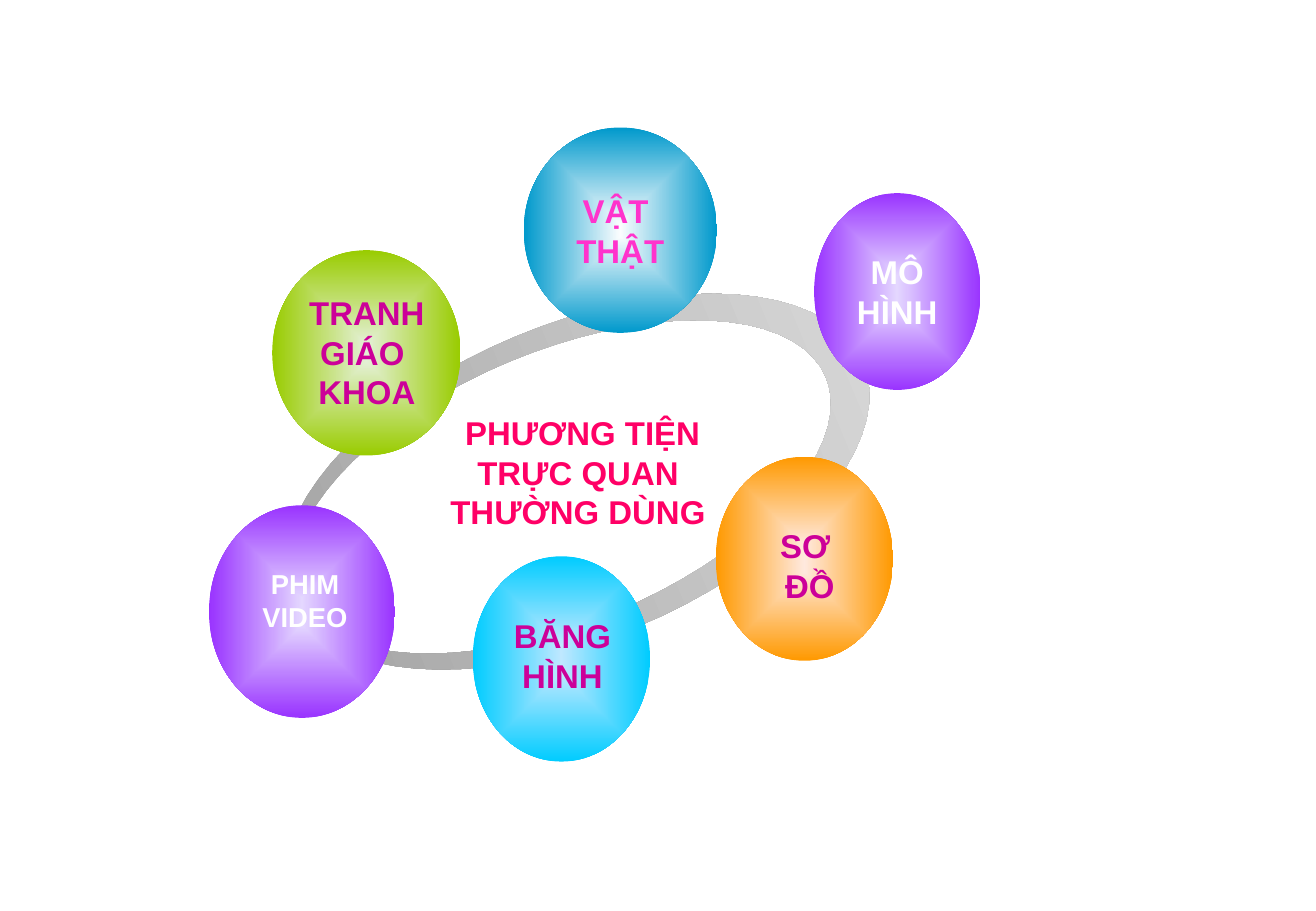
"""Builds a slide of six visual teaching aids placed around a tilted ring."""
from math import cos, sin, tau

from lxml import etree
from pptx import Presentation
from pptx.dml.color import RGBColor
from pptx.enum.shapes import MSO_SHAPE
from pptx.enum.text import MSO_ANCHOR, PP_ALIGN
from pptx.oxml.ns import qn
from pptx.util import Inches, Pt

OVAL = MSO_SHAPE.OVAL
MIDDLE = MSO_ANCHOR.MIDDLE
CENTER = PP_ALIGN.CENTER

WHITE = RGBColor(0xFF, 0xFF, 0xFF)
ROSE = RGBColor(0xFF, 0x00, 0x66)
PINK = RGBColor(0xFF, 0x33, 0xCC)
MAGENTA = RGBColor(0xCC, 0x00, 0x99)
DARK_GRAY = RGBColor(0x9D, 0x9D, 0x9D)
LIGHT_GRAY = RGBColor(0xDD, 0xDD, 0xDD)
PURPLE = (RGBColor(0xE4, 0xD7, 0xFF), RGBColor(0x99, 0x33, 0xFF))
ORANGE = (RGBColor(0xFF, 0xE9, 0xDE), RGBColor(0xFF, 0x99, 0x00))
LIME = (RGBColor(0xE4, 0xF0, 0xD6), RGBColor(0x99, 0xCC, 0x00))
BLUE = (RGBColor(0xFB, 0xFD, 0xFE), RGBColor(0x00, 0x99, 0xCC))
CYAN = (RGBColor(0xBF, 0xE8, 0xFF), RGBColor(0x00, 0xCC, 0xFF))


def paint_gradient(shape, start, end):
    shape.shadow.inherit = False
    shape.line.fill.background()
    shape.fill.gradient()
    shape.fill.gradient_angle = 0
    for stop, color in zip(shape.fill.gradient_stops, (start, end)):
        stop.color.rgb = color


def write_lines(frame, lines, size, color, wrap):
    frame.word_wrap = wrap
    for index, line in enumerate(lines):
        paragraph = frame.add_paragraph() if index else frame.paragraphs[0]
        paragraph.text = line
        paragraph.alignment = CENTER
        paragraph.font.name = "Arial"
        paragraph.font.size = Pt(size)
        paragraph.font.bold = True
        paragraph.font.color.rgb = color


prs = Presentation()
prs.slide_width = Inches(10.83)
prs.slide_height = Inches(7.5)
slide = prs.slides.add_slide(prs.slide_layouts[6])
shapes = slide.shapes

STEPS = 72
outer_edge, inner_edge = [
    [(Inches(x + rx * cos(tau * i / STEPS)), Inches(y + ry * sin(tau * i / STEPS)))
     for i in range(STEPS)]
    for x, y, rx, ry in [(4.745, 3.965, 2.555, 1.295), (4.62, 3.96, 2.35, 1.12)]
]
inner_edge.reverse()
builder = shapes.build_freeform(*outer_edge[0])
builder.add_line_segments(outer_edge[1:])
builder.move_to(*inner_edge[0])
builder.add_line_segments(inner_edge[1:])
ring = builder.convert_to_shape()
ring.rotation = 337.4
paint_gradient(ring, DARK_GRAY, LIGHT_GRAY)

title = shapes.add_textbox(Inches(3.6), Inches(3.35), Inches(2.39), Inches(1.09))
write_lines(title.text_frame, ["PHƯƠNG TIỆN", "TRỰC QUAN ", "THƯỜNG DÙNG "],
            19.5, ROSE, False)

aids = [
    ((6.7, 1.59, 1.37, 1.62), PURPLE, None, ["MÔ", "HÌNH"], 19.5, WHITE),
    ((5.89, 3.76, 1.46, 1.68), ORANGE, (6.19, 4.28, 0.95, 0.76),
     ["SƠ ", "ĐỒ"], 19.5, MAGENTA),
    ((2.24, 2.06, 1.55, 1.69), LIME, (2.39, 2.36, 1.26, 1.09),
     ["TRANH GIÁO ", "KHOA"], 19.5, MAGENTA),
    ((4.31, 1.05, 1.59, 1.69), BLUE, None, ["VẬT ", "THẬT"], 19.5, PINK),
    ((3.89, 4.58, 1.46, 1.69), CYAN, (4.01, 5.02, 1.24, 0.76),
     ["BĂNG HÌNH"], 19.5, MAGENTA),
    ((1.72, 4.16, 1.53, 1.75), PURPLE, (1.89, 4.62, 1.24, 0.65),
     ["PHIM", "VIDEO"], 16.2, WHITE),
]
for ball_box, colors, label_box, lines, size, color in aids:
    ball = shapes.add_shape(OVAL, *map(Inches, ball_box))
    paint_gradient(ball, *colors)
    gradient = ball.fill._xPr.find(qn("a:gradFill"))
    gradient.remove(gradient.find(qn("a:lin")))
    radial = etree.SubElement(gradient, qn("a:path"), {"path": "shape"})
    etree.SubElement(radial, qn("a:fillToRect"),
                     {side: "50000" for side in "ltrb"})
    if label_box:
        label = shapes.add_textbox(*map(Inches, label_box))
        write_lines(label.text_frame, lines, size, color, True)
    else:
        ball.text_frame.vertical_anchor = MIDDLE
        write_lines(ball.text_frame, lines, size, color, False)

prs.save("out.pptx")
